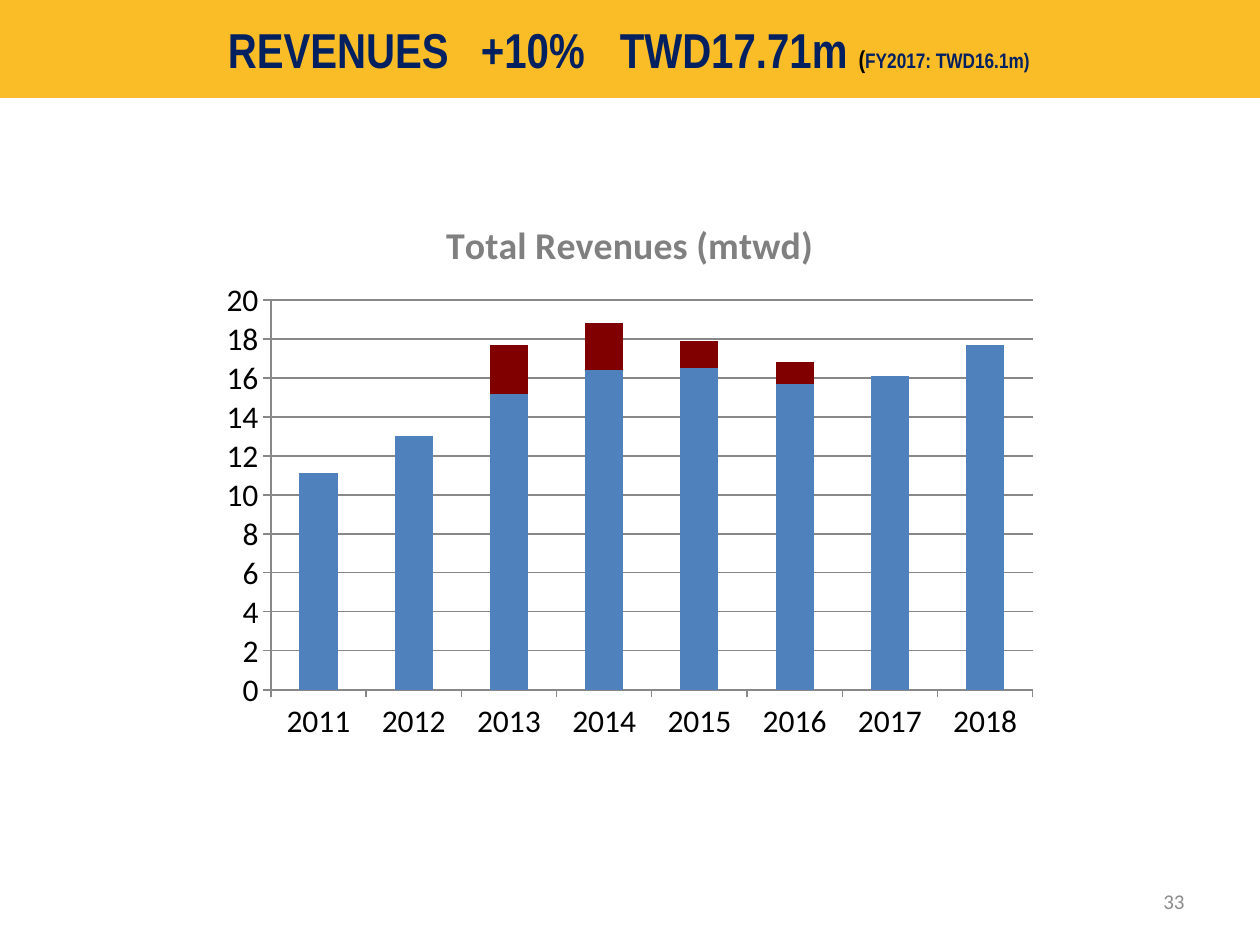
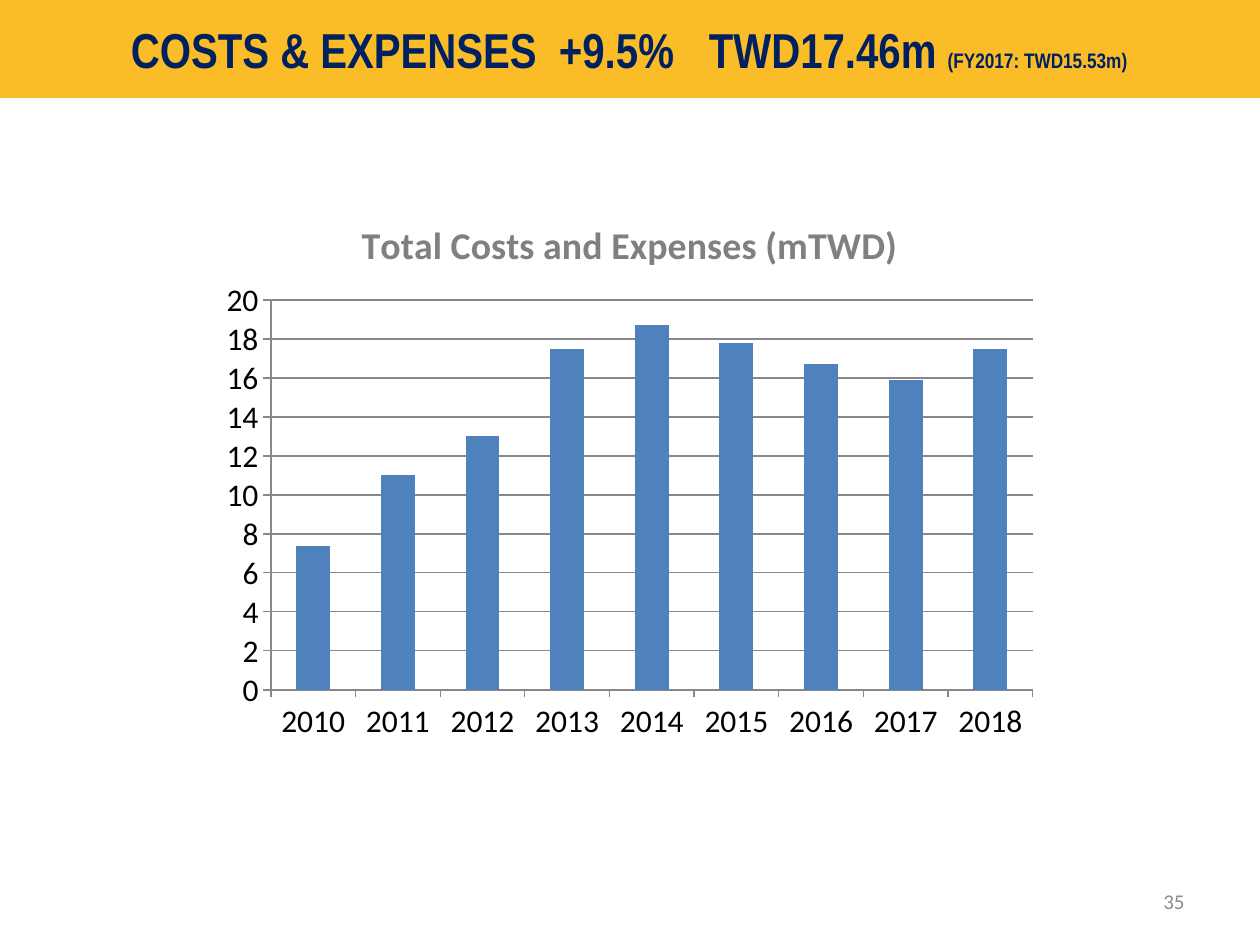
from lxml.etree import SubElement
from pptx import Presentation
from pptx.chart.data import CategoryChartData
from pptx.dml.color import RGBColor
from pptx.enum.chart import XL_CHART_TYPE, XL_TICK_MARK
from pptx.enum.shapes import MSO_SHAPE
from pptx.enum.text import MSO_ANCHOR, PP_ALIGN
from pptx.oxml.ns import qn
from pptx.util import Emu, Pt

PX = 914400 / 126
GOLD = RGBColor(0xFB, 0xBD, 0x27)
NAVY = RGBColor(0x00, 0x20, 0x60)
BLACK = RGBColor(0x00, 0x00, 0x00)
GREY = RGBColor(0x80, 0x80, 0x80)
PALE_GREY = RGBColor(0x8C, 0x8C, 0x8C)
RULE_GREY = RGBColor(0x88, 0x88, 0x88)
BLUE = RGBColor(0x4F, 0x81, 0xBD)
MAROON = RGBColor(0x80, 0x00, 0x00)
HEADING_FONT = "Arial Narrow"
BODY_FONT = "Calibri"

SLIDE_SIZE = (1260, 945)
BAND_BOX = (0, 0, 1260, 98)
CHART_BOX = (210, 193, 840, 560)
NUMBER_BOX = (903, 876, 294, 50)
PLOT_BOX = (61, 107, 762, 390)


def px(length):
    """Turn a length in px into EMU."""
    return Emu(round(length * PX))


def set_font(font, name, size, color, bold=False):
    """Give a font its face, size, colour and weight."""
    font.name, font.size, font.bold = name, Pt(size), bold
    font.color.rgb = color


def add_band(slide, box, runs, indent, tabs):
    """Draw the title band, its phrases set at tab stops from the indent."""
    band = slide.shapes.add_shape(MSO_SHAPE.RECTANGLE, *map(px, box))
    band.shadow.inherit = False
    band.fill.solid()
    band.fill.fore_color.rgb = GOLD
    band.line.fill.background()
    frame = band.text_frame
    frame.margin_left, frame.margin_right = px(indent), 0
    frame.vertical_anchor = MSO_ANCHOR.MIDDLE
    heading = frame.paragraphs[0]
    heading.alignment = PP_ALIGN.LEFT
    tab_list = SubElement(heading._p.get_or_add_pPr(), qn("a:tabLst"))
    for stop in tabs:
        SubElement(tab_list, qn("a:tab"), pos=str(px(stop - indent)), algn="l")
    for text, size, color in runs:
        phrase = heading.add_run()
        phrase.text = text
        set_font(phrase.font, HEADING_FONT, size, color, True)


def add_number(slide, box, number):
    """Write the slide number at the right of its box."""
    footer = slide.shapes.add_textbox(*map(px, box)).text_frame
    footer.word_wrap = True
    footer.vertical_anchor = MSO_ANCHOR.MIDDLE
    footer.text = str(number)
    footer.paragraphs[0].alignment = PP_ALIGN.RIGHT
    set_font(footer.paragraphs[0].runs[0].font, BODY_FONT, 12, PALE_GREY)


def place_plot(chart, box, plot_box):
    """Fix the inner plot area as fractions of the chart box."""
    area = chart._chartSpace.chart.plotArea
    layout = area.find(qn("c:layout"))
    if layout is None:
        layout = SubElement(area, qn("c:layout"))
        area.insert(0, layout)
    manual = SubElement(layout, qn("c:manualLayout"))
    SubElement(manual, qn("c:layoutTarget"), val="inner")
    for side in "xy":
        SubElement(manual, qn(f"c:{side}Mode"), val="edge")
    for side, length, whole in zip("xywh", plot_box, box[2:] * 2):
        SubElement(manual, qn(f"c:{side}"), val=f"{length / whole:.4f}")


def add_columns(slide, box, title, kind, years, amounts):
    """Draw the titled column chart of yearly amounts."""
    data = CategoryChartData()
    data.categories = years
    for index, values in enumerate(amounts, 1):
        data.add_series(f"Series {index}", values)
    chart = slide.shapes.add_chart(kind, *map(px, box), data).chart
    chart.has_legend = False
    set_font(chart.font, BODY_FONT, 18, BLACK)
    chart.has_title = True
    chart.chart_title.include_in_layout = False
    heading = chart.chart_title.text_frame
    heading.text = title
    set_font(heading.paragraphs[0].runs[0].font, BODY_FONT, 21.6, GREY, True)

    plot = chart.plots[0]
    plot.gap_width = 150
    plot.vary_by_categories = False
    if kind == XL_CHART_TYPE.COLUMN_STACKED:
        plot.overlap = 100
    for series, color in zip(plot.series, (BLUE, MAROON)):
        series.format.fill.solid()
        series.format.fill.fore_color.rgb = color

    scale = chart.value_axis
    scale.minimum_scale, scale.maximum_scale, scale.major_unit = 0, 20, 2
    scale.has_major_gridlines = True
    for axis in (chart.category_axis, scale):
        axis.major_tick_mark = XL_TICK_MARK.OUTSIDE
        set_font(axis.tick_labels.font, BODY_FONT, 18, BLACK)
    for rule in (chart.category_axis, scale, scale.major_gridlines):
        rule.format.line.color.rgb = RULE_GREY
        rule.format.line.width = Pt(0.75)
    place_plot(chart, box, PLOT_BOX)


def add_result_slide(deck, number, band, columns):
    """Add one slide with a title band, a column chart and a number."""
    slide = deck.slides.add_slide(deck.slide_layouts[6])
    add_number(slide, NUMBER_BOX, number)
    add_band(slide, BAND_BOX, **band)
    add_columns(slide, CHART_BOX, **columns)


def main():
    """Build the revenue and cost slides."""
    deck = Presentation()
    deck.slide_width, deck.slide_height = map(px, SLIDE_SIZE)
    add_result_slide(
        deck, 33,
        dict(runs=[("REVENUES\t+10%\tTWD17.71m ", 28, NAVY),
                   ("(", 14, BLACK),
                   ("FY2017: TWD16.1m)", 12, NAVY)],
             indent=228, tabs=(481, 620)),
        dict(title="Total Revenues (mtwd)",
             kind=XL_CHART_TYPE.COLUMN_STACKED,
             years=[str(year) for year in range(2011, 2019)],
             amounts=[(11.1, 13, 15.2, 16.4, 16.5, 15.7, 16.1, 17.7),
                      (None, None, 2.5, 2.4, 1.4, 1.1, 0, 0)]))
    add_result_slide(
        deck, 35,
        dict(runs=[("COSTS & EXPENSES\t+9.5%\tTWD17.46m ", 28, NAVY),
                   ("(FY2017: TWD15.53m)", 12, NAVY)],
             indent=131, tabs=(559, 709)),
        dict(title="Total Costs and Expenses (mTWD)",
             kind=XL_CHART_TYPE.COLUMN_CLUSTERED,
             years=[str(year) for year in range(2010, 2019)],
             amounts=[(7.4, 11, 13, 17.5, 18.7, 17.8, 16.7, 15.9, 17.5)]))
    deck.save("out.pptx")


if __name__ == "__main__":
    main()
